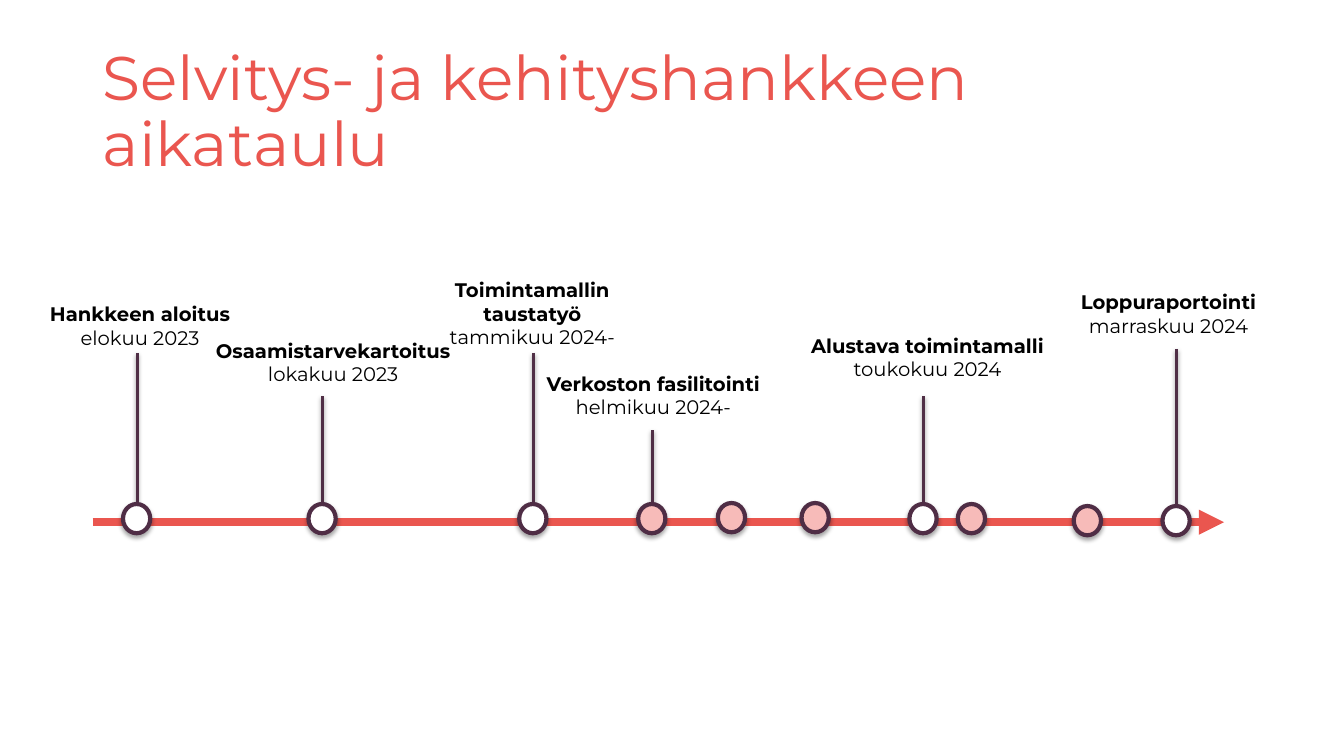
"""Build a project timeline slide with dated milestones along an arrow."""
from lxml import etree
from pptx import Presentation
from pptx.dml.color import RGBColor
from pptx.enum.shapes import MSO_CONNECTOR, MSO_SHAPE
from pptx.enum.text import MSO_ANCHOR, PP_ALIGN
from pptx.oxml import parse_xml
from pptx.oxml.ns import nsdecls, qn
from pptx.util import Pt

STRAIGHT = MSO_CONNECTOR.STRAIGHT
OVAL = MSO_SHAPE.OVAL
MIDDLE = MSO_ANCHOR.MIDDLE
CENTER = PP_ALIGN.CENTER
PX = 9144
THEME = {
    "font": "Montserrat",
    "coral": RGBColor.from_string("EA564F"),
    "stem": RGBColor.from_string("502F46"),
    "ring": RGBColor.from_string("4F2D45"),
    "pink": RGBColor.from_string("F7BBB9"),
    "white": RGBColor.from_string("FFFFFF"),
    "black": RGBColor.from_string("000000"),
    "title": Pt(44),
    "label": Pt(14),
}


def add_line(start, end, color, width, alpha):
    """Draw a straight line, with a soft shadow when alpha is above zero."""
    line = slide.shapes.add_connector(STRAIGHT, *[n * PX for n in start + end])
    line.line.color.rgb = THEME[color]
    line.line.width = Pt(width)
    add_shade(line, alpha, 1.6)
    return line


def add_shade(item, alpha, drop):
    """Give an item its effect list, empty when alpha is zero."""
    shade = (
        f'<a:outerShdw blurRad="{Pt(3.1)}" dist="{Pt(drop)}" dir="5400000" rotWithShape="0">'
        f'<a:srgbClr val="000000"><a:alpha val="{alpha * 1000}"/></a:srgbClr></a:outerShdw>'
    ) if alpha else ""
    item._element.spPr.append(
        parse_xml(f'<a:effectLst {nsdecls("a")}>{shade}</a:effectLst>'))


deck = Presentation()
deck.slide_width, deck.slide_height = 1333 * PX, 750 * PX
slide = deck.slides.add_slide(deck.slide_layouts[6])

box = slide.shapes.add_textbox(92 * PX, 40 * PX, 1150 * PX, 145 * PX)
frame = box.text_frame
frame.word_wrap = True
frame.vertical_anchor = MIDDLE
para = frame.paragraphs[0]
para.line_spacing = 0.9
run = para.add_run()
run.text = "Selvitys- ja kehityshankkeen aikataulu"
run.font.name = THEME["font"]
run.font.size = THEME["title"]
run.font.color.rgb = THEME["coral"]

arrow = add_line((92, 518), (1214, 518), "coral", 6, 0)
etree.SubElement(arrow.line._get_or_add_ln(), qn("a:tailEnd"), type="triangle")

stems = [(136, 350, 506), (320, 393, 506), (529, 350, 506),
         (647, 427, 506), (916, 393, 500), (1167, 346, 502)]
for x, top, foot in stems:
    add_line((x, top), (x, foot), "stem", 2, 38)

dots = [(122, 500, "white"), (306, 500, "white"), (515, 500, "white"),
        (633, 500, "pink"), (712, 499, "pink"), (795, 499, "pink"),
        (902, 500, "white"), (950, 500, "pink"), (1065, 502, "pink"),
        (1153, 502, "white")]
for x, y, color in dots:
    dot = slide.shapes.add_shape(OVAL, x * PX, y * PX, 27 * PX, 29 * PX)
    dot.fill.solid()
    dot.fill.fore_color.rgb = THEME[color]
    dot.line.color.rgb = THEME["ring"]
    dot.line.width = Pt(3)
    add_shade(dot, 35, 1.8)

labels = [
    (21, 295, 236, 57, ["Hankkeen aloitus", "elokuu 2023"]),
    (204, 331, 253, 57, ["Osaamistarvekartoitus", "lokakuu 2023"]),
    (436, 271, 184, 81, ["Toimintamallin", "taustatyö", "tammikuu 2024-"]),
    (530, 364, 236, 57, ["Verkoston fasilitointi", "helmikuu 2024-"]),
    (793, 326, 254, 57, ["Alustava toimintamalli", "toukokuu 2024"]),
    (1061, 283, 196, 57, ["Loppuraportointi", "marraskuu 2024"]),
]
for x, y, width, height, lines in labels:
    box = slide.shapes.add_textbox(x * PX, y * PX, width * PX, height * PX)
    frame = box.text_frame
    frame.word_wrap = False
    for row, text in enumerate(lines):
        para = frame.add_paragraph() if row else frame.paragraphs[0]
        para.alignment = CENTER
        run = para.add_run()
        run.text = text
        run.font.name = THEME["font"]
        run.font.size = THEME["label"]
        run.font.bold = row < len(lines) - 1
        run.font.color.rgb = THEME["black"]

deck.save("out.pptx")
